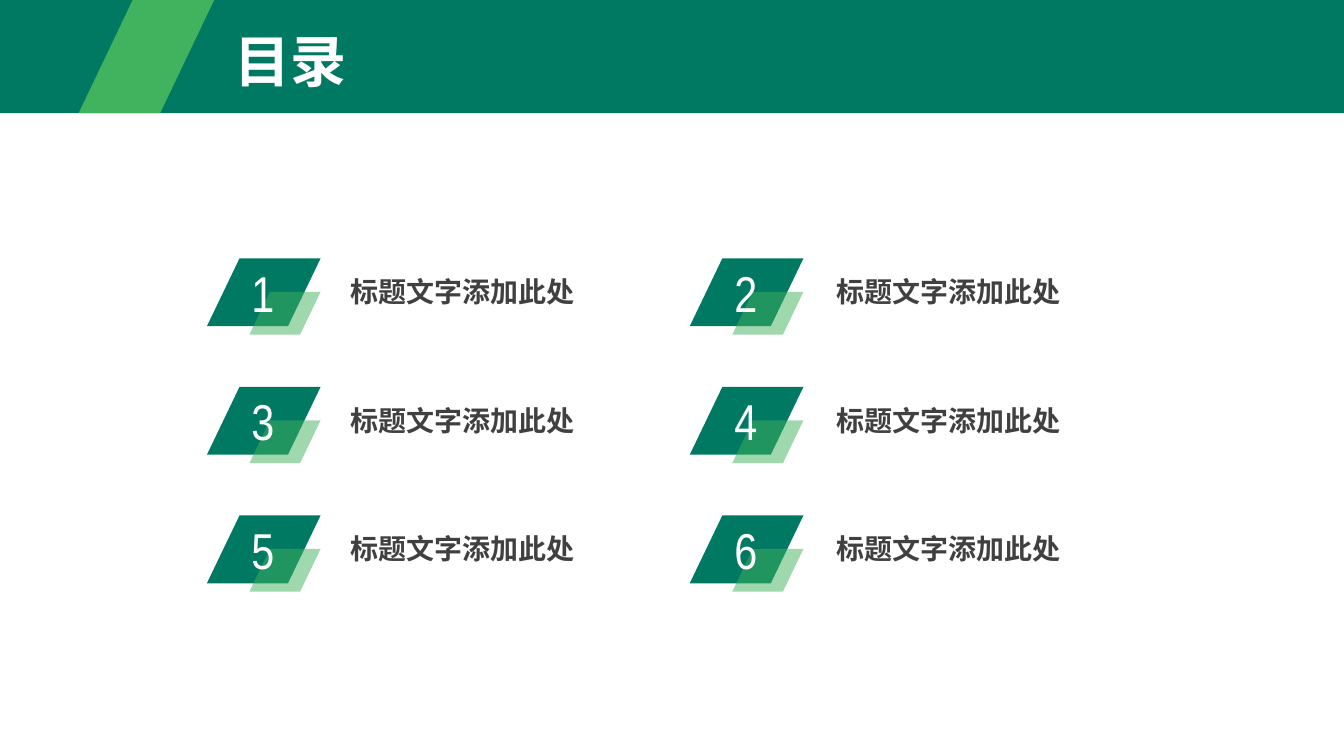
from pptx import Presentation
from pptx.dml.color import RGBColor
from pptx.enum.text import MSO_ANCHOR as Anchor, MSO_AUTO_SIZE as AutoSize, PP_ALIGN as Align
from pptx.oxml.ns import qn
from pptx.oxml.xmlchemy import OxmlElement
from pptx.util import Pt

GREEN = RGBColor(0x00, 0x79, 0x63)
LIGHT_GREEN = RGBColor(0x41, 0xB2, 0x5D)
WHITE = RGBColor(0xFF, 0xFF, 0xFF)
DARK_GREY = RGBColor(0x40, 0x40, 0x40)

TITLE_FORMAT = {"name": "Arial Narrow", "size": Pt(40), "bold": True}
LABEL_FORMAT = {"name": "Arial", "size": Pt(20), "bold": True}
NUMBER_FORMAT = {"name": "Arial Narrow", "size": Pt(36), "bold": False}

SLIDE_WIDTH, SLIDE_HEIGHT = 960, 540
BANNER_HEIGHT = 80.8
COLUMNS = [(147.8, 95.6), (492.7, 97.7)]
FIRST_ROW, ROW_PITCH, ROW_COUNT = 184.5, 91.8, 3
LABELS = ["标题文字添加此处"] * (ROW_COUNT * len(COLUMNS))


def add_slanted(shapes, left, top, width, height, slant, color, opacity=100):
    """Add a parallelogram whose top edge is shifted right by the slant."""
    corners = [(left + slant, top), (left + width, top),
               (left + width - slant, top + height), (left, top + height)]
    points = [(Pt(x), Pt(y)) for x, y in corners]
    builder = shapes.build_freeform(*points[0], scale=1.0)
    builder.add_line_segments(points[1:], close=True)
    shape = builder.convert_to_shape()
    paint(shape, color)
    if opacity < 100:
        alpha = OxmlElement("a:alpha")
        alpha.set("val", str(opacity * 1000))
        next(shape.element.iter(qn("a:srgbClr"))).append(alpha)


def paint(shape, color):
    """Give a shape a plain fill without outline or shadow."""
    shape.shadow.inherit = False
    shape.fill.solid()
    shape.fill.fore_color.rgb = color
    shape.line.fill.background()


def write(shape, text, font_format, color, align):
    """Write one unwrapped, formatted line into a shape."""
    frame = shape.text_frame
    frame.text = text
    frame.word_wrap = False
    frame.auto_size = AutoSize.SHAPE_TO_FIT_TEXT
    frame.vertical_anchor = Anchor.MIDDLE
    paragraph = frame.paragraphs[0]
    paragraph.alignment = align
    font = paragraph.runs[0].font
    for name, value in font_format.items():
        setattr(font, name, value)
    font.color.rgb = color


def add_banner(slide, left, top, width, height, text):
    """Add the green banner with its slanted accent and the title."""
    band = slide.shapes.add_shape(1, Pt(left), Pt(top), Pt(width), Pt(height))
    paint(band, GREEN)
    add_slanted(slide.shapes, left + 56.2, top, 96.8, height, 38.6, LIGHT_GREEN)
    title = slide.shapes.title
    title.left, title.top = Pt(left + 160.6), Pt(top + 15.2)
    title.width, title.height = Pt(94.4), Pt(55.7)
    write(title, text, TITLE_FORMAT, WHITE, Align.LEFT)
    title.element.getparent().append(title.element)


def add_entry(slide, left, top, label_offset, number, text):
    """Add one numbered contents entry as a group."""
    shapes = slide.shapes.add_group_shape().shapes
    add_slanted(shapes, left, top, 81.2, 48.5, 23.3, GREEN)
    add_slanted(shapes, left + 30.4, top + 24, 50.8, 30.5, 14.6, LIGHT_GREEN, 50)
    label = shapes.add_textbox(Pt(left + label_offset), Pt(top + 7.9), Pt(176.4), Pt(31.5))
    write(label, text, LABEL_FORMAT, DARK_GREY, Align.LEFT)
    digit = shapes.add_textbox(Pt(left + 23.2), Pt(top - 1.4), Pt(33.6), Pt(51))
    write(digit, str(number), NUMBER_FORMAT, WHITE, Align.CENTER)


def add_contents_slide(presentation):
    """Add the contents slide with its banner and grid of entries."""
    slide = presentation.slides.add_slide(presentation.slide_layouts[5])
    add_banner(slide, 0, 0, SLIDE_WIDTH, BANNER_HEIGHT, "目录")
    for index, text in enumerate(LABELS):
        row, column = divmod(index, len(COLUMNS))
        left, label_offset = COLUMNS[column]
        add_entry(slide, left, FIRST_ROW + row * ROW_PITCH, label_offset, index + 1, text)


def main():
    """Build and save the presentation."""
    presentation = Presentation()
    presentation.slide_width = Pt(SLIDE_WIDTH)
    presentation.slide_height = Pt(SLIDE_HEIGHT)
    add_contents_slide(presentation)
    presentation.save("out.pptx")


if __name__ == "__main__":
    main()
